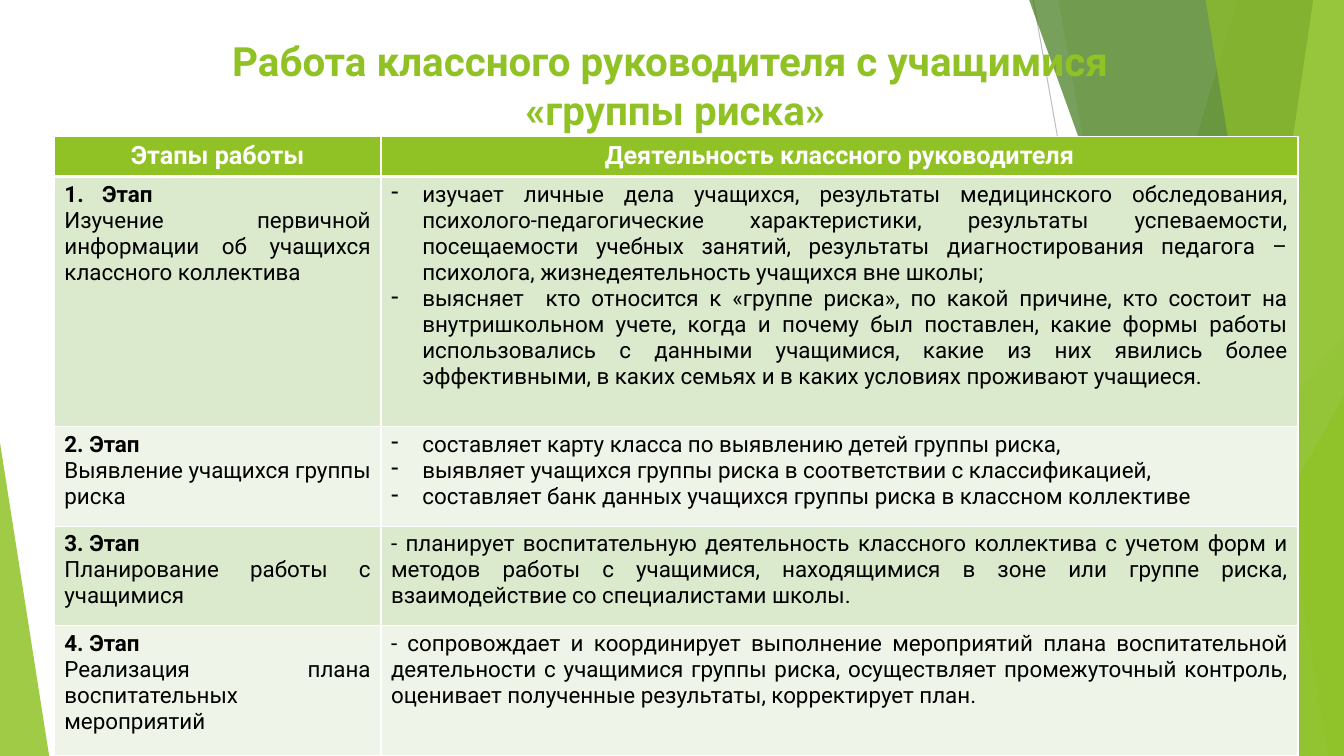
from dataclasses import dataclass

from lxml import etree
from pptx import Presentation
from pptx.dml.color import RGBColor
from pptx.enum.shapes import MSO_CONNECTOR, MSO_SHAPE
from pptx.enum.text import MSO_ANCHOR, MSO_AUTO_SIZE, PP_ALIGN
from pptx.oxml.ns import qn
from pptx.util import Cm, Pt

STRAIGHT = MSO_CONNECTOR.STRAIGHT
TRIANGLE = MSO_SHAPE.ISOSCELES_TRIANGLE
TOP = MSO_ANCHOR.TOP
NO_AUTOFIT = MSO_AUTO_SIZE.NONE
CENTER, JUSTIFY = PP_ALIGN.CENTER, PP_ALIGN.JUSTIFY
TITLE_ONLY_LAYOUT = 5


@dataclass(frozen=True)
class Theme:
    font: str = "Roboto"
    accent: str = "90C226"
    leaf: str = "54A021"
    forest: str = "3F7819"
    lime: str = "C0E474"
    white: str = "FFFFFF"
    black: str = "000000"
    row_fills: tuple = ("DBE9CD", "EEF4E8")
    title_size: float = 28.8
    header_size: float = 18
    body_size: float = 16


@dataclass(frozen=True)
class Box:
    left: float
    top: float
    width: float
    height: float


@dataclass(frozen=True)
class Item:
    text: str
    bold: bool = False
    marker: str = ""
    indent: float = 0


THEME = Theme()
SLIDE = Box(0, 0, 33.87, 19.05)
TITLE = Box(3.05, 0.79, 27.94, 2.9)
TABLE = Box(1.37, 3.43, 31.34, 15.62)
FIRST_COLUMN = 8.23
ROW_HEIGHTS = (1.02, 6.3, 2.51, 2.51, 3.28)

TITLE_LINES = ("Работа классного руководителя с учащимися ", "«группы риска»")
HEADERS = ("Этапы работы", "Деятельность классного руководителя")


def dashed(text):
    return Item(text, marker="-", indent=0.79)


STAGES = (
    ([Item("Этап", True, "1.", 0.95),
      Item("Изучение первичной информации об учащихся классного коллектива")],
     [dashed("изучает личные дела учащихся, результаты медицинского обследования, "
             "психолого-педагогические характеристики, результаты успеваемости, "
             "посещаемости учебных занятий, результаты диагностирования педагога – "
             "психолога, жизнедеятельность учащихся вне школы;"),
      dashed("выясняет  кто относится к «группе риска», по какой причине, кто состоит на "
             "внутришкольном учете, когда и почему был поставлен, какие формы работы "
             "использовались с данными учащимися, какие из них явились более "
             "эффективными, в каких семьях и в каких условиях проживают учащиеся.")]),
    ([Item("2. Этап", True), Item("Выявление учащихся группы риска")],
     [dashed("составляет карту класса по выявлению детей группы риска,"),
      dashed("выявляет учащихся группы риска в соответствии с классификацией,"),
      dashed("составляет банк данных учащихся группы риска в классном коллективе")]),
    ([Item("3. Этап", True), Item("Планирование работы с учащимися")],
     [Item("- планирует воспитательную деятельность классного коллектива с учетом форм и "
           "методов работы с учащимися, находящимися в зоне или группе риска, "
           "взаимодействие со специалистами школы.")]),
    ([Item("4. Этап", True), Item("Реализация плана воспитательных мероприятий")],
     [Item("- сопровождает и координирует выполнение мероприятий плана воспитательной "
           "деятельности с учащимися группы риска, осуществляет промежуточный контроль, "
           "оценивает полученные результаты, корректирует план. ")]),
)


def add_run(paragraph, text, size, color, bold):
    run = paragraph.add_run()
    run.text = text
    run.font.name = THEME.font
    run.font.size = Pt(size)
    run.font.bold = bold
    run.font.color.rgb = RGBColor.from_string(color)


def paint(shape, color, opacity):
    shape.shadow.inherit = False
    shape.fill.solid()
    shape.fill.fore_color.rgb = RGBColor.from_string(color)
    shape.line.fill.background()
    color_node = shape.fill._xPr.find(qn("a:solidFill"))[0]
    etree.SubElement(color_node, qn("a:alpha"), val=str(opacity * 1000))


def add_thin_line(slide, box, start, end, color):
    line = slide.shapes.add_connector(
        STRAIGHT, Cm(box.left + start[0]), Cm(box.top + start[1]),
        Cm(box.left + end[0]), Cm(box.top + end[1]))
    line.line.color.rgb = RGBColor.from_string(color)
    line.line.width = Pt(0.75)
    etree.SubElement(line._element.spPr, qn("a:effectLst"))


def add_band(slide, box, upper, lower, color, opacity):
    right, bottom = Cm(box.left + box.width), Cm(box.top + box.height)
    top = Cm(box.top - 0.02)
    builder = slide.shapes.build_freeform(Cm(box.left + upper), top)
    builder.add_line_segments(
        [(right, top), (right, bottom), (Cm(box.left + lower), bottom)], close=True)
    paint(builder.convert_to_shape(), color, opacity)


def add_corner(slide, box, left, top, width, apex, color, opacity):
    shape = slide.shapes.add_shape(
        TRIANGLE, Cm(box.left + left), Cm(box.top + top), Cm(width), Cm(box.height - top))
    shape.adjustments[0] = apex
    paint(shape, color, opacity)


def draw_backdrop(slide, box):
    add_thin_line(slide, box, (26.04, 0), (29.41, box.height), "BFBFBF")
    add_thin_line(slide, box, (box.width, 10.24), (20.62, box.height), "D9D9D9")
    add_band(slide, box, 31.19, 25.5, THEME.accent, 30)
    add_band(slide, box, 26.67, 30.05, THEME.accent, 20)
    add_corner(slide, box, 24.82, 8.46, 9.05, 1, THEME.leaf, 72)
    add_band(slide, box, 25.93, 32.79, THEME.forest, 70)
    add_band(slide, box, 33.1, 30.28, THEME.lime, 70)
    add_band(slide, box, 30.38, 33.48, THEME.accent, 65)
    add_corner(slide, box, 28.8, 9.98, 5.07, 1, THEME.accent, 80)
    add_corner(slide, box, 0, 11.15, 1.24, 0, THEME.accent, 85)


def draw_title(slide, box):
    title = slide.shapes.title
    slide.shapes._spTree.append(title._element)
    title.left, title.top = Cm(box.left), Cm(box.top)
    title.width, title.height = Cm(box.width), Cm(box.height)
    frame = title.text_frame
    frame.word_wrap = True
    frame.auto_size = NO_AUTOFIT
    frame.vertical_anchor = TOP
    paragraph = frame.paragraphs[0]
    paragraph.alignment = CENTER
    for index, line in enumerate(TITLE_LINES):
        if index:
            paragraph.add_line_break()
        add_run(paragraph, line, THEME.title_size, THEME.accent, True)


def style_cell(cell, color, bottom_width):
    properties = cell._tc.get_or_add_tcPr()
    for side, width in (("L", 1), ("R", 1), ("T", 1), ("B", bottom_width)):
        border = etree.SubElement(properties, qn(f"a:ln{side}"), w=str(Pt(width)))
        fill = etree.SubElement(border, qn("a:solidFill"))
        etree.SubElement(fill, qn("a:srgbClr"), val=THEME.white)
    cell.fill.solid()
    cell.fill.fore_color.rgb = RGBColor.from_string(color)


def add_marker(paragraph, item):
    properties = paragraph._p.get_or_add_pPr()
    properties.set("marL", str(Cm(item.indent)))
    properties.set("indent", str(-Cm(item.indent)))
    if item.marker == "-":
        etree.SubElement(properties, qn("a:buChar"), char=item.marker)
    else:
        etree.SubElement(properties, qn("a:buAutoNum"), type="arabicPeriod")


def fill_cell(cell, items, alignment, size, color):
    frame = cell.text_frame
    for index, item in enumerate(items):
        paragraph = frame.add_paragraph() if index else frame.paragraphs[0]
        paragraph.alignment = alignment
        if item.marker:
            add_marker(paragraph, item)
        add_run(paragraph, item.text, size, color, item.bold)


def draw_stage_table(slide, box):
    table = slide.shapes.add_table(
        len(ROW_HEIGHTS), len(HEADERS),
        Cm(box.left), Cm(box.top), Cm(box.width), Cm(box.height)).table
    for column, width in zip(table.columns, (FIRST_COLUMN, box.width - FIRST_COLUMN)):
        column.width = Cm(width)
    for row, height in zip(table.rows, ROW_HEIGHTS):
        row.height = Cm(height)
    for column, header in enumerate(HEADERS):
        cell = table.cell(0, column)
        style_cell(cell, THEME.accent, 3)
        fill_cell(cell, [Item(header, True)], CENTER, THEME.header_size, THEME.white)
    for row, stage in enumerate(STAGES, 1):
        for column, items in enumerate(stage):
            cell = table.cell(row, column)
            style_cell(cell, THEME.row_fills[(row - 1) % 2], 1)
            fill_cell(cell, items, JUSTIFY, THEME.body_size, THEME.black)


def main():
    presentation = Presentation()
    presentation.slide_width = Cm(SLIDE.width)
    presentation.slide_height = Cm(SLIDE.height)
    slide = presentation.slides.add_slide(presentation.slide_layouts[TITLE_ONLY_LAYOUT])
    draw_backdrop(slide, SLIDE)
    draw_title(slide, TITLE)
    draw_stage_table(slide, TABLE)
    presentation.save("out.pptx")


if __name__ == "__main__":
    main()
